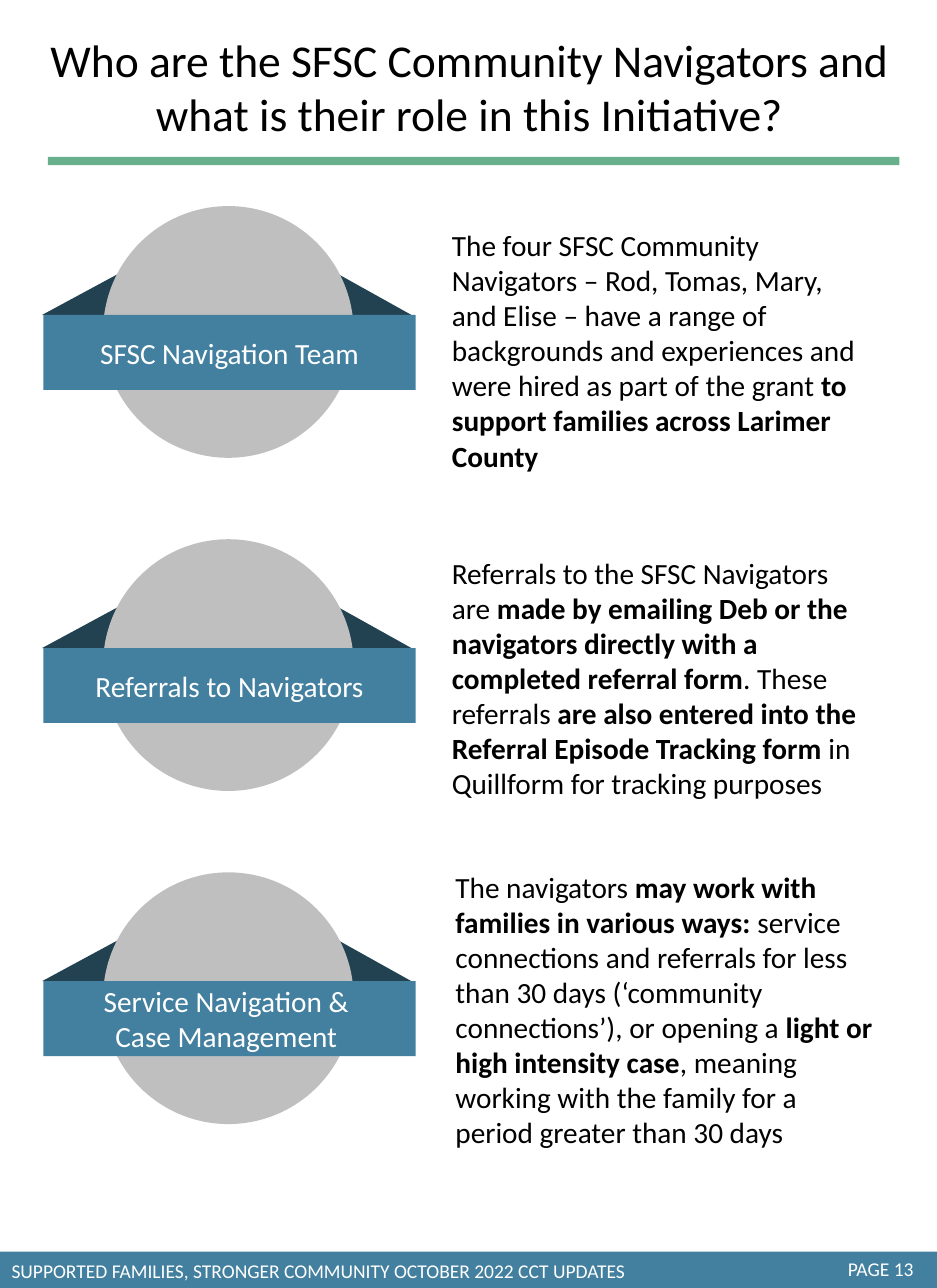
from pptx import Presentation
from pptx.dml.color import RGBColor
from pptx.enum.shapes import MSO_SHAPE
from pptx.enum.text import MSO_ANCHOR, MSO_AUTO_SIZE, PP_ALIGN
from pptx.util import Inches, Pt

RECT = MSO_SHAPE.RECTANGLE
OVAL = MSO_SHAPE.OVAL
PEAK = MSO_SHAPE.ISOSCELES_TRIANGLE
TOP, MIDDLE = MSO_ANCHOR.TOP, MSO_ANCHOR.MIDDLE
LEFT, CENTER = PP_ALIGN.LEFT, PP_ALIGN.CENTER
FIXED = MSO_AUTO_SIZE.NONE

BLUE = RGBColor(0x43, 0x80, 0x9F)
NAVY = RGBColor(0x22, 0x42, 0x52)
GREEN = RGBColor(0x68, 0xB0, 0x8C)
GRAY = RGBColor(0xBF, 0xBF, 0xBF)
WHITE = RGBColor(0xFF, 0xFF, 0xFF)
BLACK = RGBColor(0, 0, 0)

FONT = "Calibri"
COLS, ROWS = 8, 11
WIDE, HIGH = Inches(8), Inches(11)
FIRST, STEP = 1.76, 2.845  # top of the first badge, rows between badges

TITLE = ("Who are the SFSC Community Navigators and "
         "what is their role in this Initiative?")
FOOTER = "SUPPORTED FAMILIES, STRONGER COMMUNITY OCTOBER 2022 CCT UPDATES"

# Badge lines, left and top of the story, story runs (every second one bold)
TOPICS = [
    (["SFSC Navigation Team"], 3.76, 1.89, [
        "The four SFSC Community Navigators – Rod, Tomas, Mary, and Elise – "
        "have a range of backgrounds and experiences and were hired as part "
        "of the grant ",
        "to support families across Larimer County"]),
    (["Referrals to Navigators"], 3.76, 4.69, [
        "Referrals to the SFSC Navigators are ",
        "made by emailing Deb or the navigators directly with a completed "
        "referral form",
        ". These referrals ",
        "are also entered into the Referral Episode Tracking form ",
        "in Quillform for tracking purposes"]),
    (["Service Navigation & ", "Case Management "], 3.79, 7.37, [
        "The navigators ",
        "may work with families in various ways:",
        " service connections and referrals for less than 30 days "
        "(‘community connections’), or opening a ",
        "light or high intensity case",
        ", meaning working with the family for a period greater than "
        "30 days"]),
]


def cells(x, y, w, h):
    """Turn columns and rows of the slide grid into lengths."""
    return (int(WIDE * x / COLS), int(HIGH * y / ROWS),
            int(WIDE * w / COLS), int(HIGH * h / ROWS))


def add_block(shapes, kind, box, color):
    block = shapes.add_shape(kind, *cells(*box))
    block.shadow.inherit = False
    block.fill.solid()
    block.fill.fore_color.rgb = color
    block.line.fill.background()
    return block


def write(frame, lines, size, color, align=LEFT, anchor=TOP, wrap=True):
    """Fill a frame with lines of runs, every second run bold."""
    frame.word_wrap = wrap
    frame.auto_size = FIXED
    frame.vertical_anchor = anchor
    for i, runs in enumerate(lines):
        para = frame.paragraphs[0] if i == 0 else frame.add_paragraph()
        para.alignment = align
        for j, text in enumerate(runs):
            run = para.add_run()
            run.text = text
            run.font.name = FONT
            run.font.size = Pt(size)
            run.font.bold = j % 2 == 1
            run.font.color.rgb = color


def add_text(slide, box, runs, size, color, wrap=True):
    frame = slide.shapes.add_textbox(*cells(*box)).text_frame
    write(frame, [runs], size, color, wrap=wrap)


def add_title(slide):
    title = slide.shapes.title
    title.left, title.top, title.width, title.height = cells(
        0.24, 0.22, 7.53, 1.04)
    write(title.text_frame, [[TITLE]], 28, BLACK, CENTER)
    add_block(slide.shapes, RECT, (0.41, 1.34, 7.27, 0.07), GREEN)


def add_badge(slide, top, lines):
    """Group a disc with a ribbon folded around it."""
    shapes = slide.shapes.add_group_shape().shapes
    add_block(shapes, PEAK, (0.36, top + 0.56, 1.37, 0.37), NAVY)
    add_block(shapes, PEAK, (2.24, top + 0.58, 1.29, 0.36), NAVY)
    add_block(shapes, OVAL, (0.88, top, 2.14, 2.15), GRAY)
    band = add_block(shapes, RECT, (0.37, top + 0.93, 3.18, 0.64), BLUE)
    write(band.text_frame, [[line] for line in lines], 18, WHITE,
          CENTER, MIDDLE)


def add_footer(slide):
    add_block(slide.shapes, RECT, (0, 10.69, COLS, 0.31), BLUE)
    add_text(slide, (0, 10.7, 5.51, 0.3), [FOOTER], 12, WHITE, False)
    add_text(slide, (7.14, 10.69, 0.82, 0.3), ["PAGE 13"], 12, WHITE, False)


def main():
    deck = Presentation()
    deck.slide_width, deck.slide_height = WIDE, HIGH
    slide = deck.slides.add_slide(deck.slide_layouts.get_by_name("Title Only"))
    add_title(slide)
    for i, (lines, left, top, story) in enumerate(TOPICS):
        add_badge(slide, FIRST + i * STEP, lines)
        add_text(slide, (left, top, 3.79, 2.22), story, 18, BLACK)
    add_footer(slide)
    deck.save("out.pptx")


if __name__ == "__main__":
    main()
